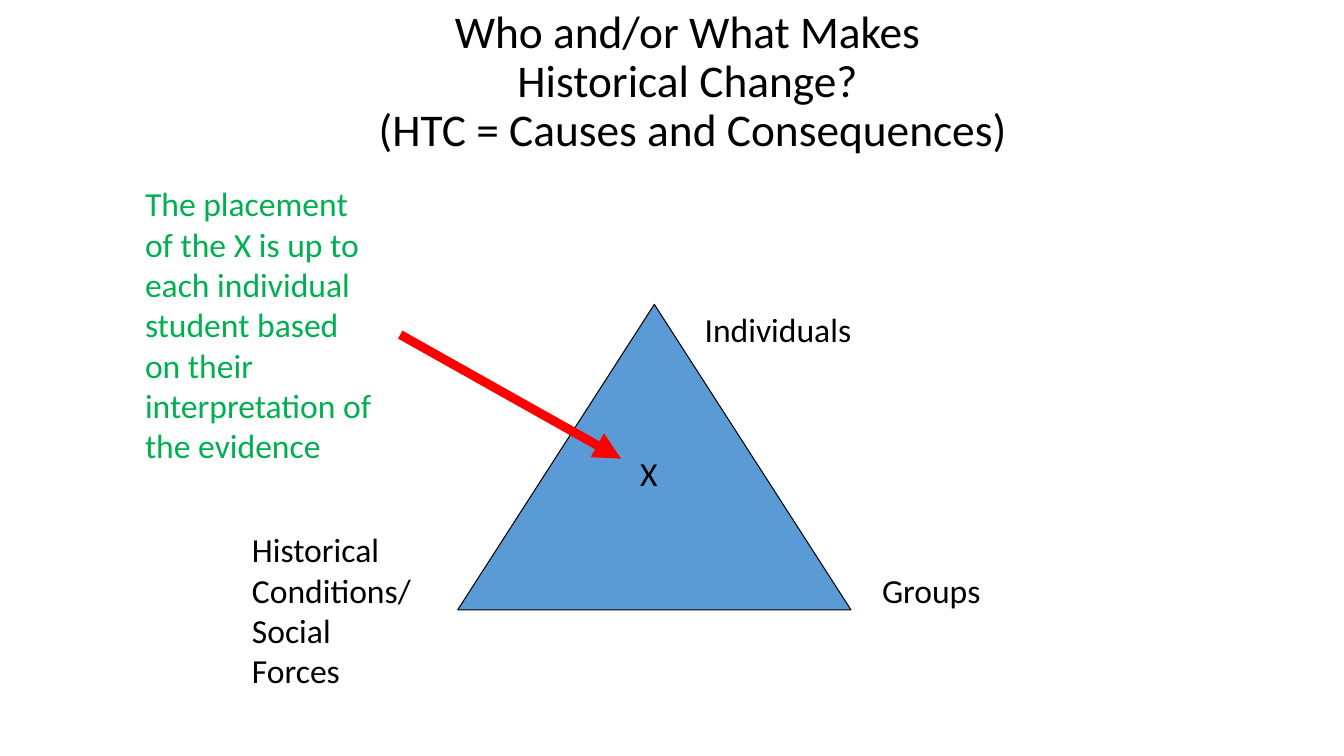
from lxml import etree
from pptx import Presentation
from pptx.dml.color import RGBColor
from pptx.enum.shapes import MSO_CONNECTOR, MSO_SHAPE
from pptx.enum.text import MSO_ANCHOR, PP_ALIGN
from pptx.oxml.ns import qn
from pptx.util import Inches, Pt

STRAIGHT = MSO_CONNECTOR.STRAIGHT
TRIANGLE = MSO_SHAPE.ISOSCELES_TRIANGLE
TOP, BOTTOM = MSO_ANCHOR.TOP, MSO_ANCHOR.BOTTOM
LEFT, CENTER = PP_ALIGN.LEFT, PP_ALIGN.CENTER

FONT = "Calibri"
BLACK, GREEN, RED, BLUE = "000000", "00B050", "FF0000", "5B9BD5"


def color(value):
    return RGBColor.from_string(value)


def add_text(page, text, left, top, width, height, *, size=24, fill=BLACK,
             align=LEFT, anchor=TOP, spacing=1.0, inset=0.1):
    box = page.shapes.add_textbox(Inches(left), Inches(top),
                                  Inches(width), Inches(height))
    frame = box.text_frame
    frame.word_wrap = True
    frame.vertical_anchor = anchor
    frame.margin_left = Inches(inset)
    para = frame.paragraphs[0]
    para.text = text
    para.alignment = align
    para.line_spacing = spacing
    for span in para.runs:
        span.font.name = FONT
        span.font.size = Pt(size)
        span.font.color.rgb = color(fill)


def add_triangle(page, left, top, width, height):
    triangle = page.shapes.add_shape(TRIANGLE, Inches(left), Inches(top),
                                     Inches(width), Inches(height))
    triangle.shadow.inherit = False
    triangle.fill.solid()
    triangle.fill.fore_color.rgb = color(BLUE)
    triangle.line.color.rgb = color(BLACK)
    triangle.line.width = Pt(0.75)


def add_arrow(page, start_x, start_y, end_x, end_y):
    arrow = page.shapes.add_connector(STRAIGHT, Inches(start_x), Inches(start_y),
                                      Inches(end_x), Inches(end_y))
    arrow.line.color.rgb = color(RED)
    arrow.line.width = Pt(6.5)
    # Arrowhead at the end, and no shadow
    etree.SubElement(arrow.line._get_or_add_ln(), qn("a:tailEnd"), type="triangle")
    etree.SubElement(arrow._element.spPr, qn("a:effectLst"))


def main():
    deck = Presentation()
    deck.slide_width = Inches(13.33)
    deck.slide_height = Inches(7.5)
    page = deck.slides.add_slide(deck.slide_layouts[6])

    # Title
    add_text(page, "Who and/or What Makes \vHistorical Change? \v"
             "(HTC = Causes and Consequences)", 2.76, 0.33, 8.22, 1.27,
             size=32.4, align=CENTER, anchor=BOTTOM, spacing=0.9)

    # Triangle of causes with a label at each corner
    add_triangle(page, 4.54, 3.02, 3.9, 3.03)
    add_text(page, "Groups", 8.65, 5.6, 1.75, 0.5)
    add_text(page, "Individuals", 6.89, 3.02, 2.29, 0.5)
    add_text(page, "Historical Conditions/Social Forces", 2.4, 5.2, 1.78, 1.72)

    # Marker, its arrow and the explanation
    add_text(page, "X", 6.03, 4.44, 0.86, 0.5, inset=0.32)
    add_arrow(page, 3.97, 3.32, 6.16, 4.55)
    add_text(page, "The placement of the X is up to each individual student "
             "based on their interpretation of the evidence",
             1.34, 1.77, 2.53, 2.93, fill=GREEN)

    deck.save("out.pptx")


if __name__ == "__main__":
    main()
